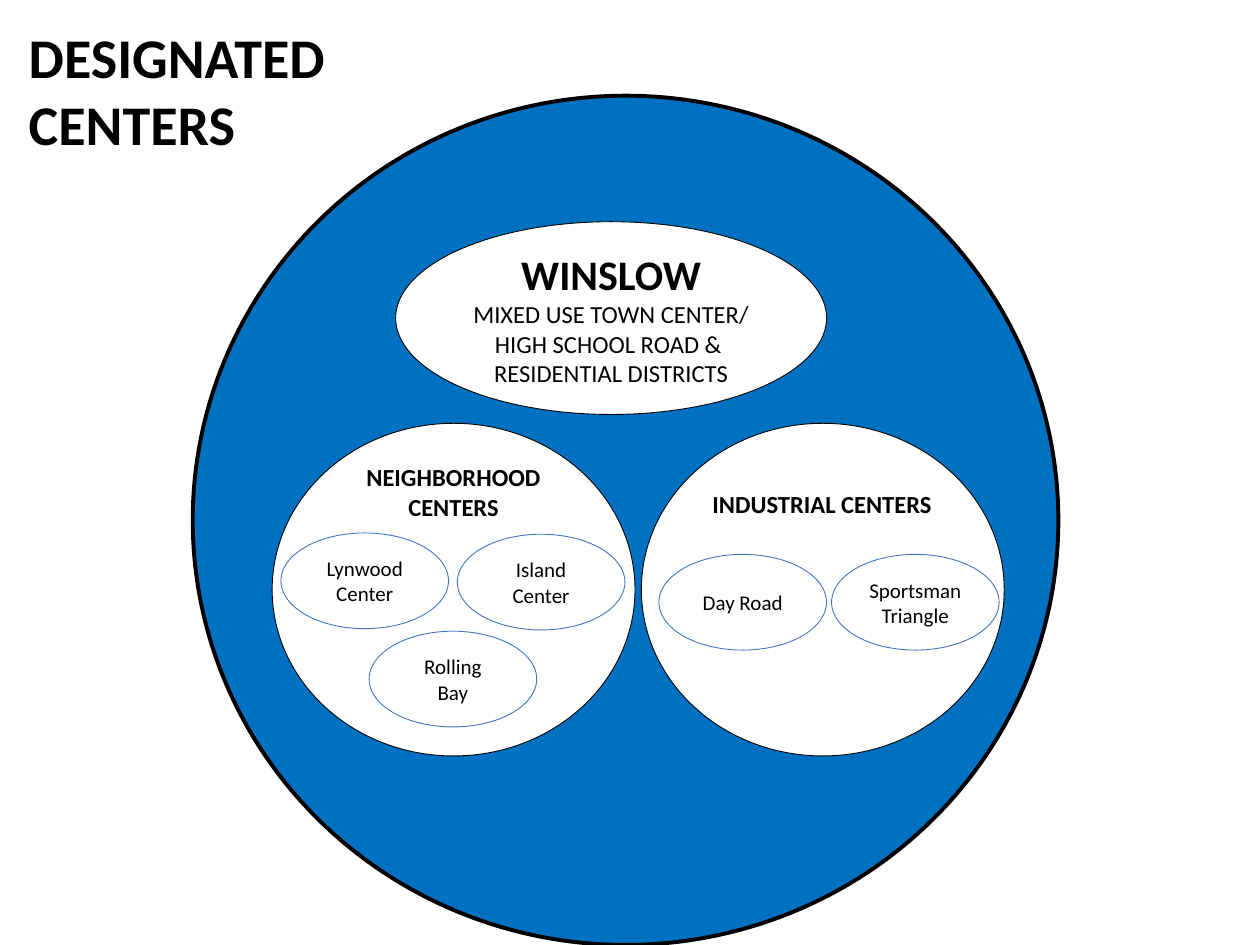
from pptx import Presentation
from pptx.dml.color import RGBColor
from pptx.enum.shapes import MSO_SHAPE
from pptx.enum.text import MSO_ANCHOR, MSO_AUTO_SIZE, PP_ALIGN
from pptx.util import Inches, Pt

COLORS = {"black": "000000", "white": "FFFFFF", "island": "0070C0", "outline": "4472C4"}
FONT = "Calibri"
GROUP_SIZE = (2.88, 2.64)
PLACE_SIZE = (1.33, 0.76)
PLACES = [
    (2.23, 4.23, ["Lynwood", "Center"]),
    (3.63, 4.24, ["Island", "Center"]),
    (2.93, 5.01, ["Rolling", "Bay"]),
    (5.23, 4.4, ["Day Road"]),
    (6.6, 4.4, ["Sportsman Triangle"]),
]


def color(name):
    """Return the named colour."""
    return RGBColor.from_string(COLORS[name])


def write_lines(tf, lines, align):
    """Fill a text frame with (text, size, bold) paragraphs."""
    tf.word_wrap = True
    for i, (text, size, bold) in enumerate(lines):
        p = tf.paragraphs[0] if i == 0 else tf.add_paragraph()
        p.add_run().text = text
        p.alignment = align
        p.font.name = FONT
        p.font.size = Pt(size)
        p.font.bold = bold
        p.font.color.rgb = color("black")


def add_ellipse(slide, box, fill="white", line="black", width=0.5, lines=()):
    """Add an outlined ellipse with optional centred text."""
    sp = slide.shapes.add_shape(MSO_SHAPE.OVAL, *map(Inches, box))
    sp.shadow.inherit = False
    sp.fill.solid()
    sp.fill.fore_color.rgb = color(fill)
    sp.line.color.rgb = color(line)
    sp.line.width = Pt(width)
    sp.text_frame.vertical_anchor = MSO_ANCHOR.MIDDLE
    write_lines(sp.text_frame, lines, PP_ALIGN.CENTER)


def add_label(slide, box, text, size, align=PP_ALIGN.CENTER):
    """Add a bold text box."""
    tf = slide.shapes.add_textbox(*map(Inches, box)).text_frame
    write_lines(tf, [(text, size, True)], align)
    tf.auto_size = MSO_AUTO_SIZE.SHAPE_TO_FIT_TEXT


def main():
    """Build the designated centers slide."""
    prs = Presentation()
    prs.slide_width, prs.slide_height = Inches(10), Inches(7.5)
    slide = prs.slides.add_slide(prs.slide_layouts[6])

    add_ellipse(slide, (1.53, 0.76, 6.87, 6.74), fill="island", width=2.25)
    add_label(slide, (0.13, 0.13, 3.2, 1.18), "DESIGNATED CENTERS", 32, PP_ALIGN.LEFT)
    districts = ["MIXED USE TOWN CENTER/", "HIGH SCHOOL ROAD & ", "RESIDENTIAL DISTRICTS"]
    winslow = [("WINSLOW", 24, True)] + [(text, 14, False) for text in districts]
    add_ellipse(slide, (3.14, 1.76, 3.42, 1.53), lines=winslow)

    for left in (2.16, 5.09):
        add_ellipse(slide, (left, 3.36, *GROUP_SIZE))
    add_label(slide, (2.45, 3.62, 2.3, 0.57), "NEIGHBORHOOD CENTERS", 14)
    add_label(slide, (5.43, 3.83, 2.19, 0.34), "INDUSTRIAL CENTERS", 14)

    for left, top, names in PLACES:
        lines = [(name, 12, False) for name in names]
        add_ellipse(slide, (left, top, *PLACE_SIZE), line="outline", lines=lines)

    prs.save("out.pptx")


if __name__ == "__main__":
    main()
